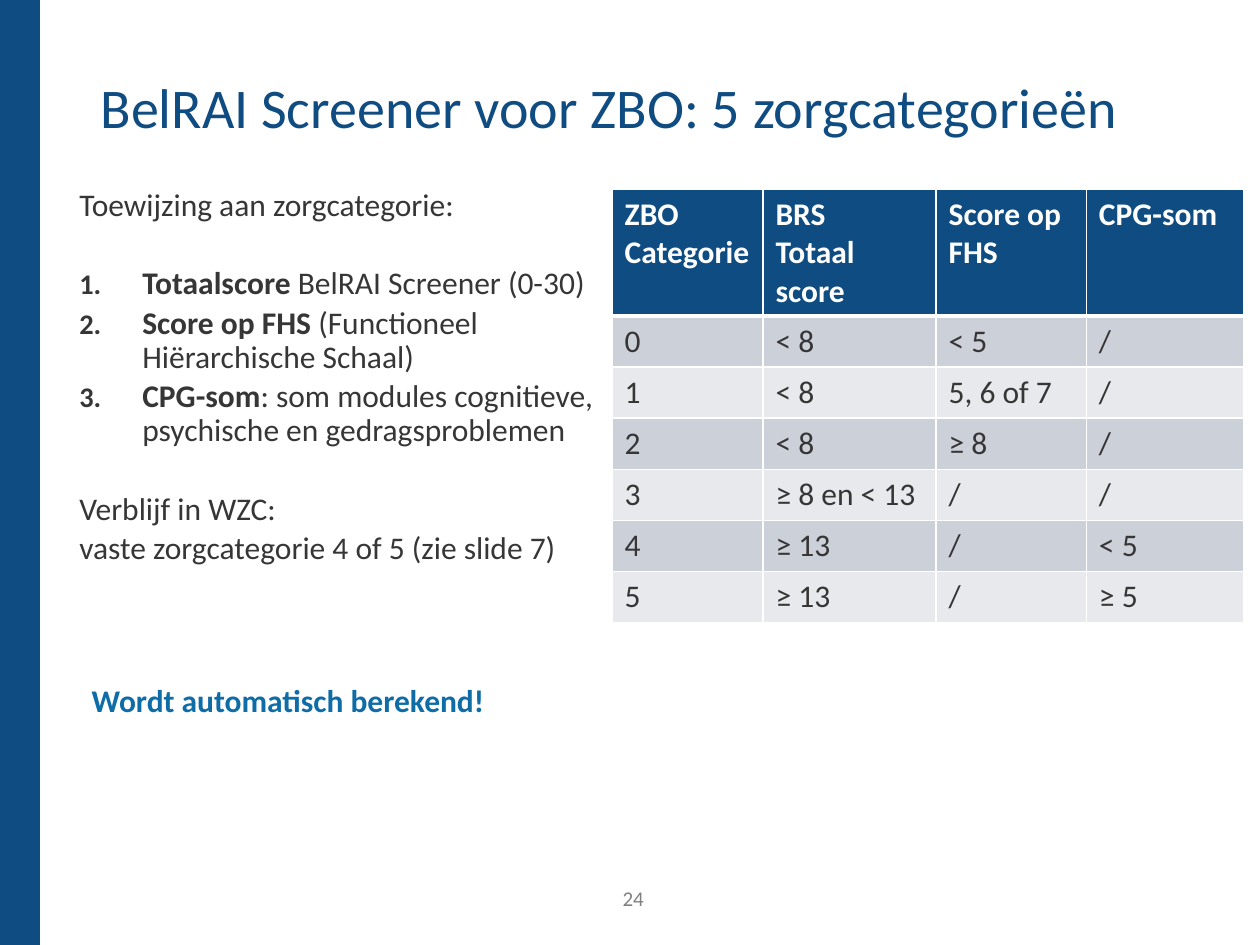
import lxml.etree
import pptx
import pptx.dml.color
import pptx.enum.shapes
import pptx.enum.text
import pptx.oxml.ns
import pptx.util

Cm, Pt, qn = pptx.util.Cm, pptx.util.Pt, pptx.oxml.ns.qn
NAVY, INK, WHITE = "0F4C81", "373636", "FFFFFF"


def rgb(value):
    return pptx.dml.color.RGBColor.from_string(value)


def style(paragraph, size, color, bold=False):
    paragraph.font.name = "Calibri"
    paragraph.font.size = Pt(size)
    paragraph.font.color.rgb = rgb(color)
    paragraph.font.bold = bold


deck = pptx.Presentation()
deck.slide_width, deck.slide_height = Cm(25.4), Cm(19.05)
slide = deck.slides.add_slide(deck.slide_layouts[6])
shapes = slide.shapes

side_band = shapes.add_shape(
    pptx.enum.shapes.MSO_SHAPE.RECTANGLE, 0, 0, Cm(0.79), deck.slide_height)
side_band.shadow.inherit = False
side_band.fill.solid()
side_band.fill.fore_color.rgb = rgb(NAVY)
side_band.line.color.rgb = rgb(NAVY)
side_band.line.width = Pt(1)

page_number = shapes.add_textbox(Cm(11.73), Cm(17.6), Cm(1.5), Cm(1)).text_frame
page_number.word_wrap = True
page_number.vertical_anchor = pptx.enum.text.MSO_ANCHOR.MIDDLE
page_number.text = "24"
page_number.paragraphs[0].alignment = pptx.enum.text.PP_ALIGN.RIGHT
style(page_number.paragraphs[0], 12, "808080")

title = shapes.add_textbox(Cm(2.03), Cm(1.47), Cm(22.2), Cm(2.64)).text_frame
explanation = shapes.add_textbox(Cm(1.6), Cm(3.81), Cm(10.74), Cm(9)).text_frame
for frame in (title, explanation):
    frame.word_wrap = True
    frame.margin_left = frame.margin_right = frame.margin_top = frame.margin_bottom = 0

title.text = "BelRAI Screener voor ZBO: 5 zorgcategorieën"
title.paragraphs[0].line_spacing = Pt(38)
style(title.paragraphs[0], 32, NAVY)

lines = [
    (0, False, "", "Toewijzing aan zorgcategorie:"),
    (25.5, True, "Totaalscore", " BelRAI Screener (0-30)"),
    (3, True, "Score op FHS ", "(Functioneel Hiërarchische Schaal)"),
    (3, True, "CPG-som", ": som modules cognitieve, psychische en gedragsproblemen"),
    (25.5, False, "", "Verblijf in WZC:"),
    (3, False, "", "vaste zorgcategorie 4 of 5 (zie slide 7)"),
]
for index, (gap, numbered, criterion, description) in enumerate(lines):
    line = explanation.paragraphs[0] if index == 0 else explanation.add_paragraph()
    line.line_spacing = 0.9
    line.space_before = Pt(gap)
    if numbered:
        properties = line._p.get_or_add_pPr()
        properties.set("marL", str(Cm(1.27)))
        properties.set("indent", str(-Cm(1.27)))
        lxml.etree.SubElement(properties, qn("a:buSzPct"), val="90000")
        lxml.etree.SubElement(properties, qn("a:buAutoNum"), type="arabicPeriod")
        term = line.add_run()
        term.text = criterion
        term.font.bold = True
    line.add_run().text = description
    style(line, 18, INK)

categories = [
    ("ZBO Categorie", "BRS\nTotaal\nscore", "Score op FHS", "CPG-som"),
    ("0", "< 8", "< 5", "/"),
    ("1", "< 8", "5, 6 of 7", "/"),
    ("2", "< 8", "≥ 8", "/"),
    ("3", "≥ 8 en < 13", "/", "/"),
    ("4", "≥ 13", "/", "< 5"),
    ("5", "≥ 13", "/", "≥ 5"),
]
score_table = shapes.add_table(
    len(categories), 4, Cm(12.34), Cm(3.81), Cm(12.74), Cm(8.74)).table
for column, width in zip(score_table.columns, (3.04, 3.49, 3.03, 3.18)):
    column.width = Cm(width)
for row, values in enumerate(categories):
    score_table.rows[row].height = Cm(1.03 if row else 2.56)
    fill = NAVY if row == 0 else "CCD0D8" if row % 2 else "E7E9ED"
    for column, value in enumerate(values):
        cell = score_table.cell(row, column)
        cell.text = value
        for paragraph in cell.text_frame.paragraphs:
            style(paragraph, 18, INK if row else WHITE, row == 0)
        for side in "LRTB":
            under_header = (row, side) in ((0, "B"), (1, "T"))
            border = lxml.etree.SubElement(
                cell._tc.get_or_add_tcPr(), qn("a:ln" + side),
                w=str(Pt(3 if under_header else 1)))
            paint = lxml.etree.SubElement(border, qn("a:solidFill"))
            lxml.etree.SubElement(paint, qn("a:srgbClr"), val=WHITE)
        cell.fill.solid()
        cell.fill.fore_color.rgb = rgb(fill)

conclusion = shapes.add_textbox(Cm(1.6), Cm(13.61), Cm(16.79), Cm(1.02)).text_frame
conclusion.word_wrap = True
conclusion.text = "Wordt automatisch berekend!"
style(conclusion.paragraphs[0], 18, "0E6DA7", True)

deck.save("out.pptx")
